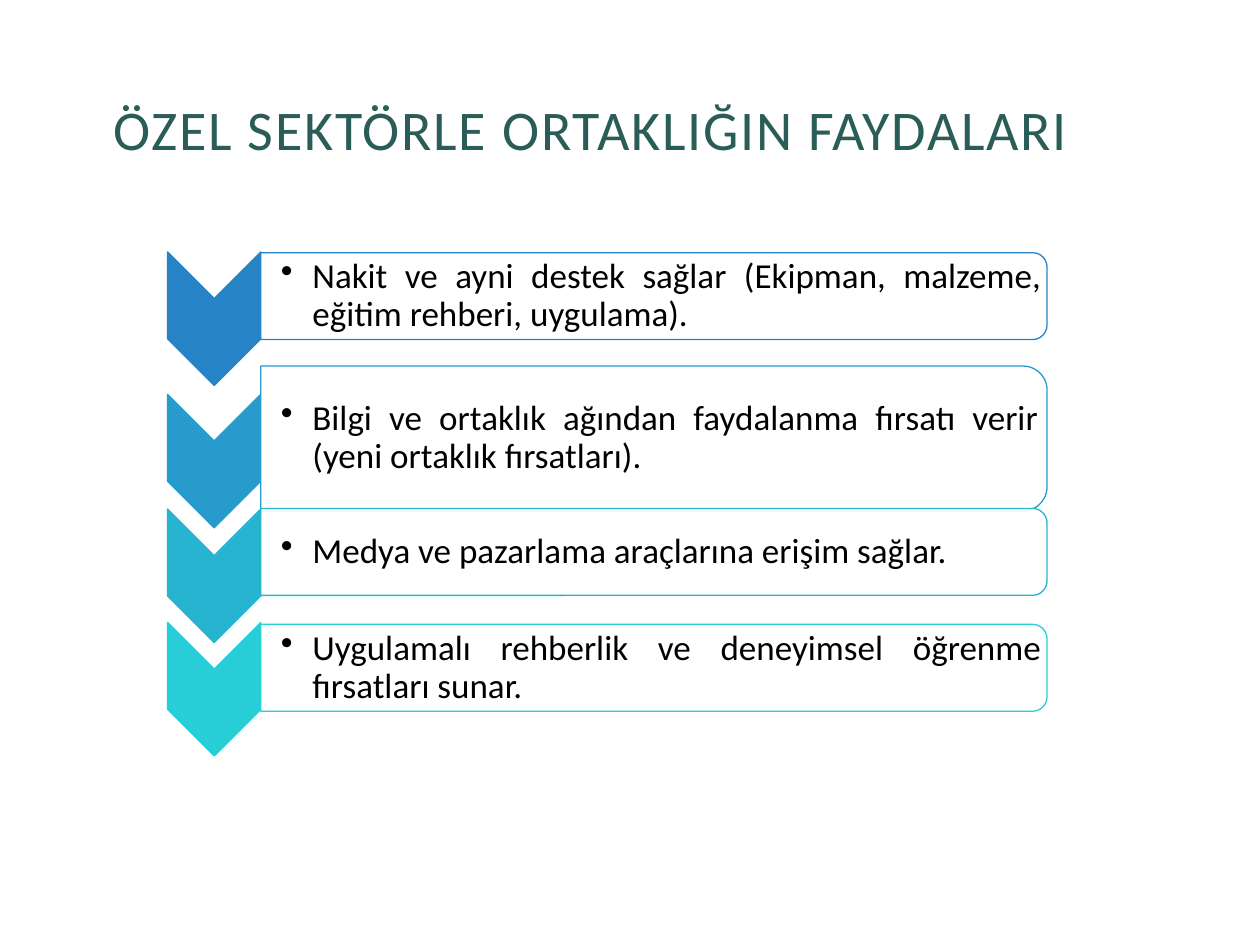
from pptx import Presentation
from pptx.dml.color import RGBColor
from pptx.enum.shapes import MSO_SHAPE as Preset
from pptx.enum.text import MSO_ANCHOR as Anchor, MSO_AUTO_SIZE as AutoSize, PP_ALIGN as Align
from pptx.oxml.ns import qn
from pptx.util import Inches, Pt
from lxml.etree import SubElement

COLORS = {
    "title": "2A5C58",
    "text": "000000",
    "card": "FFFFFF",
    "blue": "2683C6",
    "sky": "269BCC",
    "teal": "27B4D1",
    "aqua": "27CED7",
}
FONT = "Calibri"
CHEVRON_MID_X, CHEVRON_LENGTH, CHEVRON_BREADTH = 1.7, 1.06, 0.74
CARD_LEFT, CARD_WIDTH = 2.07, 6.24

BENEFITS = [
    ("Nakit ve ayni destek sağlar (Ekipman, malzeme, eğitim rehberi, uygulama).",
     "blue", 2.53, 2.35, 0.69),
    ("Bilgi ve ortaklık ağından faydalanma fırsatı verir (yeni ortaklık fırsatları).",
     "sky", 3.66, 3.48, 1.15),
    ("Medya ve pazarlama araçlarına erişim sağlar.",
     "teal", 4.57, 4.38, 0.69),
    ("Uygulamalı rehberlik ve deneyimsel öğrenme fırsatları sunar.",
     "aqua", 5.47, 5.3, 0.69),
]


def rgb(name):
    return RGBColor.from_string(COLORS[name])


def set_frame(frame, left, top, right, bottom):
    frame.word_wrap = True
    frame.auto_size = AutoSize.NONE
    frame.vertical_anchor = Anchor.MIDDLE
    frame.margin_left, frame.margin_top = Inches(left), Inches(top)
    frame.margin_right, frame.margin_bottom = Inches(right), Inches(bottom)


def add_run(paragraph, text, size, color):
    run = paragraph.add_run()
    run.text = text
    run.font.name = FONT
    run.font.size = Pt(size)
    run.font.color.rgb = rgb(color)
    return run


def add_title(slide, text):
    title = slide.shapes.title
    title.left, title.top = Inches(0.83), Inches(0.25)
    title.width, title.height = Inches(8.33), Inches(1.64)
    set_frame(title.text_frame, 0.07, 0.04, 0.07, 0.04)
    heading = title.text_frame.paragraphs[0]
    heading.alignment = Align.LEFT
    heading.line_spacing = 0.8
    run = add_run(heading, text, 32, "title")
    run.font._element.set("spc", "100")


def add_turned_shape(slide, preset, mid_x, mid_y, width, height, fill, line):
    shape = slide.shapes.add_shape(
        preset, Inches(mid_x - width / 2), Inches(mid_y - height / 2),
        Inches(width), Inches(height))
    shape.rotation = 90
    shape.shadow.inherit = False
    shape.fill.solid()
    shape.fill.fore_color.rgb = rgb(fill)
    shape.line.color.rgb = rgb(line)
    shape.line.width = Pt(0.75)
    return shape


def add_chevron(slide, mid_y, color):
    add_turned_shape(slide, Preset.CHEVRON, CHEVRON_MID_X, mid_y,
                     CHEVRON_LENGTH, CHEVRON_BREADTH, color, color)


def add_card(slide, mid_y, height, color):
    card = add_turned_shape(slide, Preset.ROUND_2_SAME_RECTANGLE,
                            CARD_LEFT + CARD_WIDTH / 2, mid_y,
                            height, CARD_WIDTH, "card", color)
    card_color = card.fill._xPr.find(qn("a:solidFill"))[0]
    SubElement(card_color, qn("a:alpha"), val="90000")


def add_benefit_text(slide, text, mid_y, card_height):
    height = card_height * 0.9
    box = slide.shapes.add_textbox(
        Inches(CARD_LEFT), Inches(mid_y - height / 2),
        Inches(CARD_WIDTH - card_height * 0.05), Inches(height))
    set_frame(box.text_frame, 0.16, 0.01, 0.01, 0.01)
    benefit = box.text_frame.paragraphs[0]
    benefit.level = 1
    benefit.alignment = Align.JUSTIFY
    benefit.line_spacing = 0.9
    properties = benefit._p.get_or_add_pPr()
    properties.set("marL", str(Inches(0.25)))
    properties.set("indent", str(-Inches(0.25)))
    SubElement(properties, qn("a:buChar"), char="•")
    add_run(benefit, text, 20, "text")


def main():
    deck = Presentation()
    deck.slide_width, deck.slide_height = Inches(10), Inches(7.5)
    slide = deck.slides.add_slide(deck.slide_layouts[5])
    add_title(slide, "ÖZEL SEKTÖRLE ORTAKLIĞIN FAYDALARI")
    for text, color, chevron_mid, card_mid, card_height in BENEFITS:
        add_chevron(slide, chevron_mid, color)
        add_card(slide, card_mid, card_height, color)
        add_benefit_text(slide, text, card_mid, card_height)
    deck.save("out.pptx")


if __name__ == "__main__":
    main()
